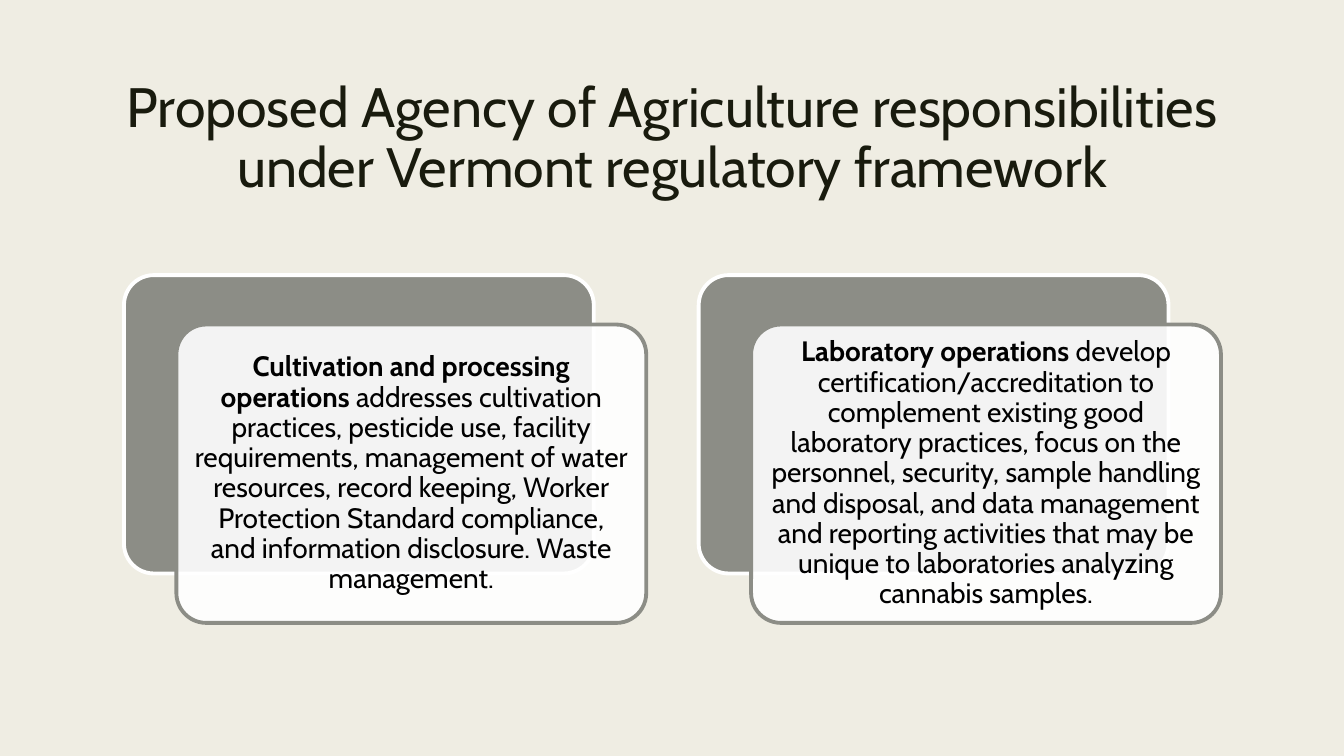
from pptx import Presentation
from pptx.dml.color import RGBColor
from pptx.enum.shapes import MSO_SHAPE
from pptx.enum.text import MSO_ANCHOR, MSO_AUTO_SIZE, PP_ALIGN
from pptx.oxml.ns import qn
from pptx.util import Inches, Pt
from lxml.etree import SubElement

# Content
TITLE = "Proposed Agency of Agriculture responsibilities under Vermont regulatory framework"
CARDS = [
    ("Cultivation and processing operations ",
     "addresses cultivation practices, pesticide use, facility requirements, "
     "management of water resources, record keeping, Worker Protection Standard "
     "compliance, and information disclosure. Waste management."),
    ("Laboratory operations ",
     "develop certification/accreditation to complement existing good laboratory "
     "practices, focus on the personnel, security, sample handling and disposal, "
     "and data management and reporting activities that may be unique to "
     "laboratories analyzing cannabis samples."),
]

# Style
FONT = "Cabin"
CREAM = RGBColor(0xEF, 0xED, 0xE3)
INK = RGBColor(0x19, 0x1B, 0x0E)
GRAY = RGBColor(0x8C, 0x8D, 0x86)
WHITE = RGBColor(0xFF, 0xFF, 0xFF)
BLACK = RGBColor(0, 0, 0)

# Grid, in inches
LEFT, TOP, STEP = 1.23, 2.73, 5.7
WIDE, HIGH = 4.66, 2.96
SHIFT_X, SHIFT_Y = 0.52, 0.49
INSET = 0.08


def add_run(para, text, size, color, bold=False):
    run = para.add_run()
    run.text = text
    font = run.font
    font.name, font.size, font.bold = FONT, Pt(size), bold
    font.color.rgb = color


def add_panel(slide, x, y, fill, edge):
    panel = slide.shapes.add_shape(
        MSO_SHAPE.ROUNDED_RECTANGLE, Inches(x), Inches(y), Inches(WIDE), Inches(HIGH))
    panel.adjustments[0] = 0.1
    panel.shadow.inherit = False
    panel.fill.solid()
    panel.fill.fore_color.rgb = fill
    panel.line.color.rgb = edge
    panel.line.width = Pt(2.75)
    return panel


def add_card(slide, x, lead, rest):
    add_panel(slide, x, TOP, GRAY, WHITE)
    front = add_panel(slide, x + SHIFT_X, TOP + SHIFT_Y, WHITE, GRAY)
    # Let the back panel show through
    tint = front.fill._xPr.find(qn("a:solidFill"))[0]
    SubElement(tint, qn("a:alpha"), val="90000")

    frame = front.text_frame
    frame.word_wrap = True
    frame.vertical_anchor = MSO_ANCHOR.MIDDLE
    frame.margin_left = frame.margin_right = Inches(INSET)
    frame.margin_top = frame.margin_bottom = Inches(INSET)
    para = frame.paragraphs[0]
    para.alignment = PP_ALIGN.CENTER
    para.line_spacing = 0.9
    add_run(para, lead, 20, BLACK, True)
    add_run(para, rest, 20, BLACK)


def main():
    deck = Presentation()
    deck.slide_width, deck.slide_height = Inches(13.33), Inches(7.5)
    slide = deck.slides.add_slide(deck.slide_layouts[5])
    slide.background.fill.solid()
    slide.background.fill.fore_color.rgb = CREAM

    # Title
    title = slide.shapes.title
    title.left, title.top = Inches(0.7), Inches(0.75)
    title.width, title.height = Inches(11.93), Inches(1.62)
    frame = title.text_frame
    frame.word_wrap = True
    frame.auto_size = MSO_AUTO_SIZE.NONE
    frame.vertical_anchor = MSO_ANCHOR.TOP
    para = frame.paragraphs[0]
    para.alignment = PP_ALIGN.CENTER
    para.line_spacing = 0.89
    add_run(para, TITLE, 39.6, INK)

    # Cards
    for i, (lead, rest) in enumerate(CARDS):
        add_card(slide, LEFT + i * STEP, lead, rest)

    deck.save("out.pptx")


if __name__ == "__main__":
    main()
